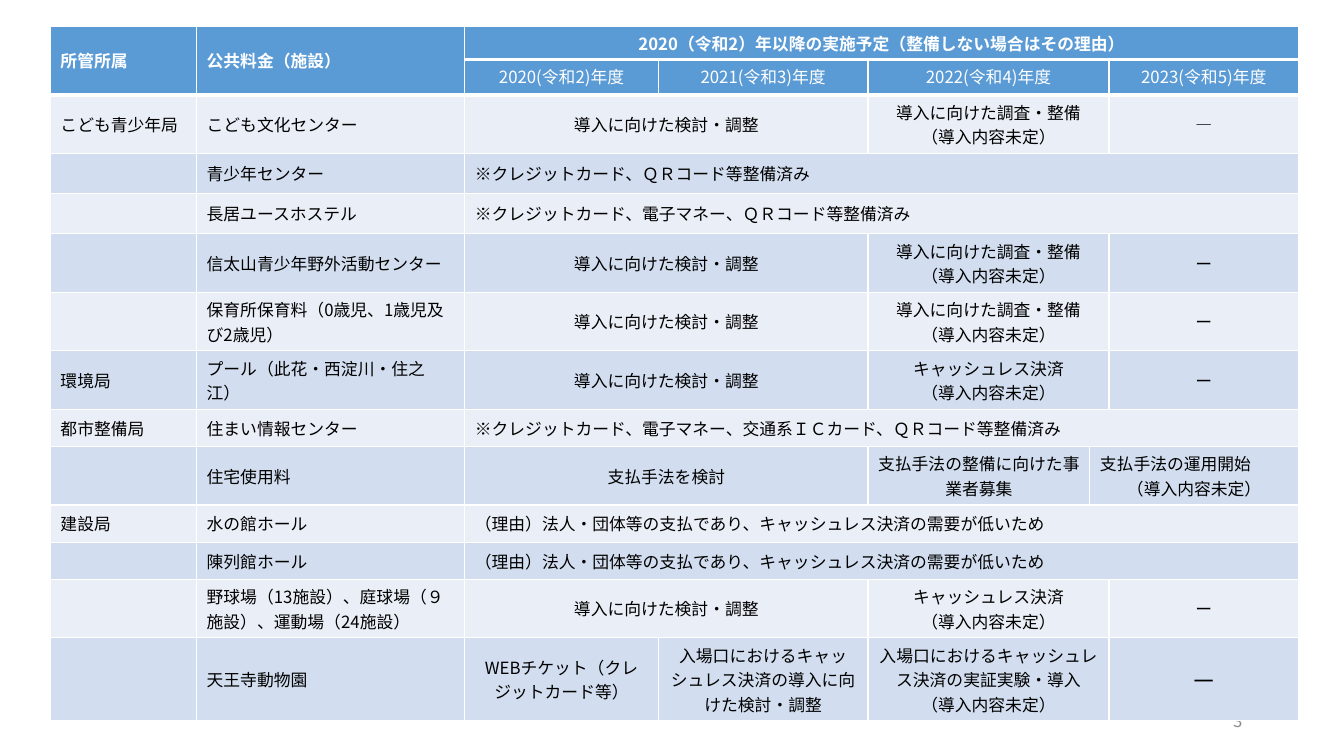
import pptx
import pptx.dml.color
import pptx.enum.text
import pptx.oxml
import pptx.oxml.ns
import pptx.util

Inches = pptx.util.Inches
Pt = pptx.util.Pt
ALIGN = pptx.enum.text.PP_ALIGN
MIDDLE = pptx.enum.text.MSO_ANCHOR.MIDDLE
TOP = pptx.enum.text.MSO_ANCHOR.TOP

FONT = "Noto Sans CJK JP"
HEADER, LIGHT, DARK = "5B9BD5", "EAEFF7", "D2DEEF"
PAGE_FORMAT = {"name": FONT, "size": Pt(12)}
BODY_FORMAT = {"name": FONT, "size": Pt(12), "bold": False}
HEAD_FORMAT = {"name": FONT, "size": Pt(12), "bold": True}
COL_WIDTHS = [1.45, 2.66, 1.92, 2.08, 2.2, 0.19, 1.88]

REVIEW = "導入に向けた検討・調整"
SURVEY = "導入に向けた調査・整備\n（導入内容未定）"
CASHLESS = "キャッシュレス決済\n（導入内容未定）"
LOW_DEMAND = "（理由）法人・団体等の支払であり、キャッシュレス決済の需要が低いため"
START = "支払手法の運用開始"

YEARS = [("2020(令和2)年度", 1), ("2021(令和3)年度", 1),
         ("2022(令和4)年度", 2), ("2023(令和5)年度", 1)]
BODY = [
    (0.58, "こども青少年局", "こども文化センター",
     [(REVIEW, 2), (SURVEY.replace("\n", "\v"), 2), ("―", 1)]),
    (0.4, "", "青少年センター", [("※クレジットカード、ＱＲコード等整備済み", 5)]),
    (0.4, "", "長居ユースホステル", [("※クレジットカード、電子マネー、ＱＲコード等整備済み", 5)]),
    (0.58, "", "信太山青少年野外活動センター", [(REVIEW, 2), (SURVEY, 2), ("ー", 1)]),
    (0.58, "", "保育所保育料（0歳児、1歳児及び2歳児）", [(REVIEW, 2), (SURVEY, 2), ("ー", 1)]),
    (0.58, "環境局", "プール（此花・西淀川・住之江）", [(REVIEW, 2), (CASHLESS, 2), ("ー", 1)]),
    (0.37, "都市整備局", "住まい情報センター",
     [("※クレジットカード、電子マネー、交通系ＩＣカード、ＱＲコード等整備済み", 5)]),
    (0.58, "", "住宅使用料",
     [("支払手法を検討", 2), ("支払手法の整備に向けた事業者募集", 1),
      (START + "\n（導入内容未定）", 2)]),
    (0.37, "建設局", "水の館ホール", [(LOW_DEMAND, 5)]),
    (0.37, "", "陳列館ホール", [(LOW_DEMAND, 5)]),
    (0.58, "", "野球場（13施設）、庭球場（９施設）、運動場（24施設）",
     [(REVIEW, 2), (CASHLESS.replace("\n", "\v"), 2), ("ー", 1)]),
    (0.82, "", "天王寺動物園",
     [("WEBチケット（クレジットカード等）", 1),
      ("入場口におけるキャッシュレス決済の導入に向けた検討・調整", 1),
      ("入場口におけるキャッシュレス決済の実証実験・導入\n（導入内容未定）", 2), ("－", 1)]),
]


def rgb(value):
    return pptx.dml.color.RGBColor.from_string(value)


def format_run(r, formats, color):
    for name, value in formats.items():
        setattr(r.font, name, value)
    r.font.color.rgb = rgb(color)
    ea = pptx.oxml.parse_xml(f'<a:ea {pptx.oxml.ns.nsdecls("a")} typeface="{FONT}"/>')
    r.font._element.find(pptx.oxml.ns.qn("a:latin")).addnext(ea)


def style_cell(cell, fill, bottom):
    tc_pr = cell._tc.get_or_add_tcPr()
    for side, width in (("L", 1), ("R", 1), ("T", 1), ("B", bottom)):
        tc_pr.append(pptx.oxml.parse_xml(
            f'<a:ln{side} {pptx.oxml.ns.nsdecls("a")} w="{Pt(width)}">'
            f'<a:solidFill><a:srgbClr val="FFFFFF"/></a:solidFill></a:ln{side}>'))
    cell.fill.solid()
    cell.fill.fore_color.rgb = rgb(fill)
    cell.text_frame.paragraphs[0]._p.get_or_add_endParaRPr().set("sz", "1200")


def write_cell(cell, text, align, formats, color, anchor=MIDDLE):
    cell.vertical_anchor = anchor
    if not text:
        return
    cell.text_frame.text = text
    for p in cell.text_frame.paragraphs:
        p.alignment = ALIGN.LEFT if p.text == START else align
        for r in p.runs:
            format_run(r, formats, color)
            if r.text == "－":
                r.font.size = Pt(18)


def write_spans(table, row, spans, formats, color, anchor=MIDDLE):
    col = 2
    for text, span in spans:
        cell = table.cell(row, col)
        if span > 1:
            cell.merge(table.cell(row, col + span - 1))
        align = ALIGN.LEFT if span == 5 and row > 1 else ALIGN.CENTER
        write_cell(cell, text, align, formats, color, anchor)
        col += span


def add_page_number(slide, left, top, width, height):
    tf = slide.shapes.add_textbox(Inches(left), Inches(top), Inches(width), Inches(height)).text_frame
    tf.word_wrap = True
    tf.vertical_anchor = MIDDLE
    p = tf.paragraphs[0]
    p.alignment = ALIGN.RIGHT
    r = p.add_run()
    r.text = "3"
    format_run(r, PAGE_FORMAT, "8C8C8C")


def add_schedule(slide, left, top):
    heights = [0.33, 0.35] + [row[0] for row in BODY]
    table = slide.shapes.add_table(
        len(heights), len(COL_WIDTHS), Inches(left), Inches(top),
        Inches(sum(COL_WIDTHS)), Inches(sum(heights))).table
    for col, width in zip(table.columns, COL_WIDTHS):
        col.width = Inches(width)
    for i, height in enumerate(heights):
        table.rows[i].height = Inches(height)
        fill = HEADER if i < 2 else (LIGHT, DARK)[i % 2]
        for cell in table.rows[i].cells:
            style_cell(cell, fill, 3 if i < 2 else 1)

    for col, text in enumerate(("所管所属", "公共料金（施設）")):
        table.cell(0, col).merge(table.cell(1, col))
        write_cell(table.cell(0, col), text, ALIGN.LEFT, HEAD_FORMAT, "FFFFFF")
    title = [("2020（令和2）年以降の実施予定（整備しない場合はその理由）", 5)]
    write_spans(table, 0, title, HEAD_FORMAT, "FFFFFF", TOP)
    write_spans(table, 1, YEARS, BODY_FORMAT, "FFFFFF", TOP)

    for i, (_, bureau, facility, spans) in enumerate(BODY, 2):
        for col, text in enumerate((bureau, facility)):
            write_cell(table.cell(i, col), text, ALIGN.LEFT, BODY_FORMAT, "000000")
        write_spans(table, i, spans, BODY_FORMAT, "000000")


def main():
    prs = pptx.Presentation()
    prs.slide_width, prs.slide_height = Inches(13.33), Inches(7.5)
    slide = prs.slides.add_slide(prs.slide_layouts[6])
    add_page_number(slide, 9.42, 6.95, 3, 0.4)
    add_schedule(slide, 0.5, 0.26)
    prs.save("out.pptx")


if __name__ == "__main__":
    main()
